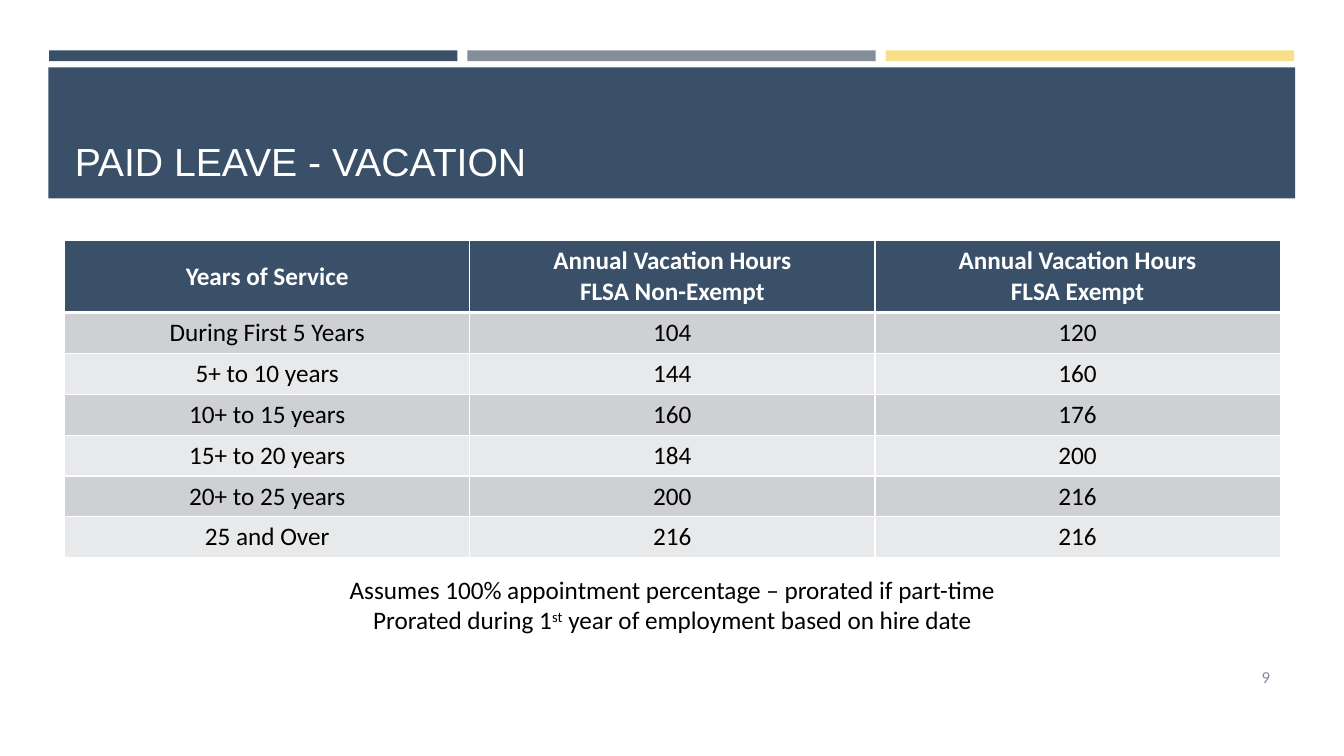
from lxml.etree import SubElement
from pptx import Presentation
from pptx.dml.color import RGBColor
from pptx.enum.shapes import MSO_SHAPE
from pptx.enum.text import MSO_ANCHOR, MSO_AUTO_SIZE, PP_ALIGN
from pptx.oxml.ns import qn
from pptx.util import Cm, Pt

COLORS = {
    "navy": "3A5068",
    "gray": "848D9A",
    "yellow": "F8DF88",
    "dark_row": "CED0D4",
    "light_row": "E8E9EB",
    "white": "FFFFFF",
    "black": "000000",
}
HEADERS = [
    ["Years of Service"],
    ["Annual Vacation Hours", "FLSA Non-Exempt"],
    ["Annual Vacation Hours", "FLSA Exempt"],
]
VACATION_HOURS = [
    ("During First 5 Years", "104", "120"),
    ("5+ to 10 years", "144", "160"),
    ("10+ to 15 years", "160", "176"),
    ("15+ to 20 years", "184", "200"),
    ("20+ to 25 years", "200", "216"),
    ("25 and Over", "216", "216"),
]
NOTES = [
    ["Assumes 100% appointment percentage – prorated if part-time"],
    ["Prorated during 1", "^st", " year of employment based on hire date"],
]
MARGIN = 1.63
CONTENT_WIDTH = 30.63


class SlideBuilder:
    base_font = {"name": "Calibri", "size": Pt(18), "bold": False}

    def __init__(self, page):
        self.page = page

    def color(self, name):
        return RGBColor.from_string(COLORS[name])

    def fill_text(self, frame, lines, color, align=PP_ALIGN.CENTER, **font):
        for index, pieces in enumerate(lines):
            para = frame.add_paragraph() if index else frame.paragraphs[0]
            para.alignment = align
            for piece in pieces:
                span = para.add_run()
                span.text = piece.lstrip("^")
                for key, value in {**self.base_font, **font}.items():
                    setattr(span.font, key, value)
                span.font.color.rgb = self.color(color)
                if piece.startswith("^"):
                    span.font._element.set("baseline", "30000")

    def bar(self, left, top, width, height, color):
        shape = self.page.shapes.add_shape(
            MSO_SHAPE.RECTANGLE, Cm(left), Cm(top), Cm(width), Cm(height)
        )
        shape.shadow.inherit = False
        shape.fill.solid()
        shape.fill.fore_color.rgb = self.color(color)
        shape.line.fill.background()

    def title(self, text, left, top, width, height):
        title = self.page.shapes.title
        self.page.shapes.element.append(title.element)
        place = {"left": left, "top": top, "width": width, "height": height}
        for key, value in place.items():
            setattr(title, key, Cm(value))
        frame = title.text_frame
        frame.auto_size = MSO_AUTO_SIZE.NONE
        frame.vertical_anchor = MSO_ANCHOR.BOTTOM
        self.fill_text(
            frame, [[text]], "white", PP_ALIGN.LEFT, name="Arial", size=Pt(28)
        )

    def text(self, lines, left, top, width, height, color, anchor=MSO_ANCHOR.TOP, **style):
        box = self.page.shapes.add_textbox(Cm(left), Cm(top), Cm(width), Cm(height))
        frame = box.text_frame
        frame.word_wrap = True
        frame.vertical_anchor = anchor
        self.fill_text(frame, lines, color, **style)

    def borders(self, cell, widths):
        properties = cell._tc.get_or_add_tcPr()
        for side, width in widths.items():
            line = SubElement(properties, qn(f"a:ln{side}"), w=str(Pt(width)))
            fill = SubElement(line, qn("a:solidFill"))
            SubElement(fill, qn("a:srgbClr"), val=COLORS["white"])

    def cell(self, cell, lines, fill, color, bold, top, bottom):
        cell.vertical_anchor = MSO_ANCHOR.MIDDLE
        self.borders(cell, {"L": 1, "R": 1, "T": top, "B": bottom})
        cell.fill.solid()
        cell.fill.fore_color.rgb = self.color(fill)
        self.fill_text(cell.text_frame, lines, color, bold=bold)

    def table(self, headers, rows, left, top, width, header_height, row_height):
        height = header_height + row_height * len(rows)
        table = self.page.shapes.add_table(
            len(rows) + 1, len(headers), Cm(left), Cm(top), Cm(width), Cm(height)
        ).table
        for index, row in enumerate(table.rows):
            row.height = Cm(row_height if index else header_height)
        for column, lines in enumerate(headers):
            header = [[line] for line in lines]
            self.cell(table.cell(0, column), header, "navy", "white", True, 1, 3)
        for index, values in enumerate(rows, 1):
            fill = "dark_row" if index % 2 else "light_row"
            top_border = 3 if index == 1 else 1
            for column, value in enumerate(values):
                cell = table.cell(index, column)
                self.cell(cell, [[value]], fill, "black", False, top_border, 1)


def main():
    deck = Presentation()
    deck.slide_width, deck.slide_height = Cm(33.87), Cm(19.05)
    builder = SlideBuilder(deck.slides.add_slide(deck.slide_layouts[5]))
    for index, color in enumerate(["navy", "gray", "yellow"]):
        builder.bar(1.24 + index * 10.54, 1.27, 10.29, 0.27, color)
    builder.bar(1.22, 1.7, 31.42, 3.3, "navy")
    builder.title("PAID LEAVE - VACATION", MARGIN, 1.96, CONTENT_WIDTH, 2.82)
    builder.table(HEADERS, VACATION_HOURS, MARGIN, 6.07, CONTENT_WIDTH, 1.77, 1.03)
    builder.text(
        [["9"]], 29.34, 16.54, 2.92, 1.02, "gray",
        MSO_ANCHOR.MIDDLE, align=PP_ALIGN.RIGHT, size=Pt(12),
    )
    builder.text(NOTES, MARGIN, 14.35, CONTENT_WIDTH, 1.8, "black")
    deck.save("out.pptx")


if __name__ == "__main__":
    main()
